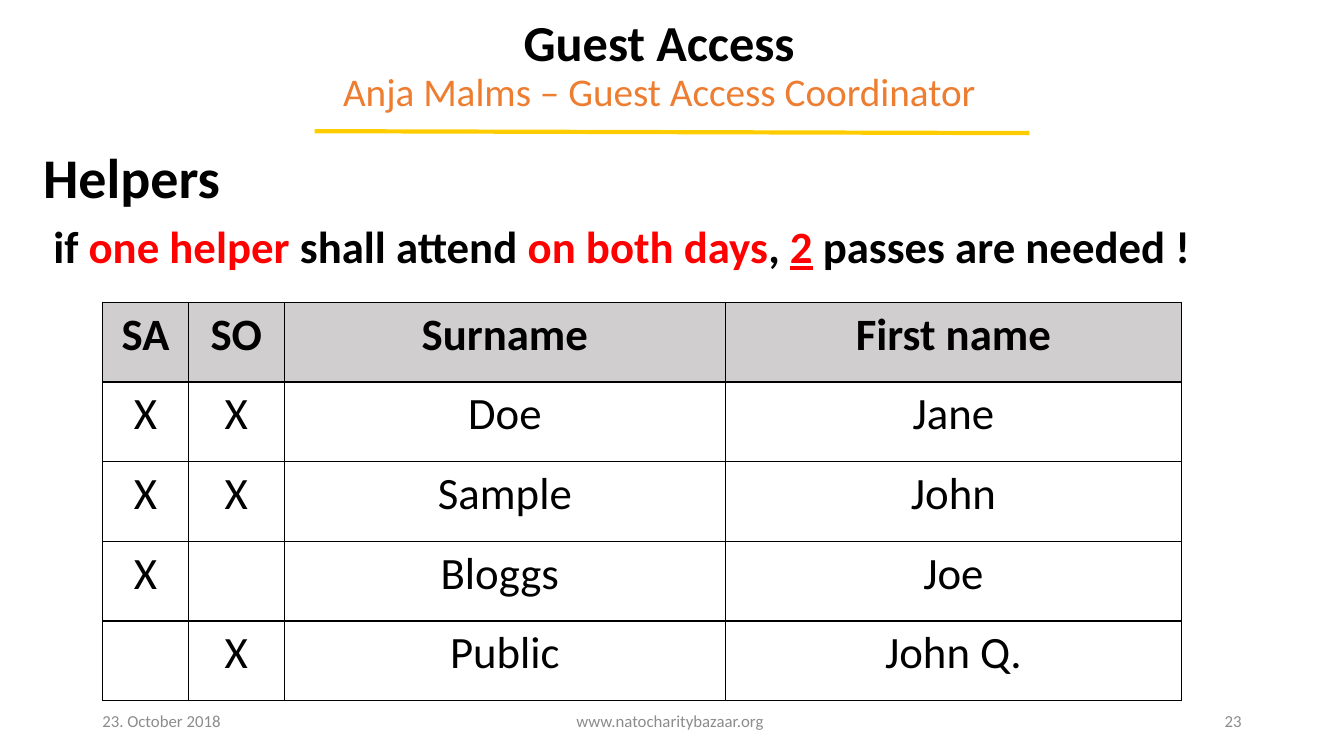
import pptx
import pptx.dml.color
import pptx.enum.shapes
import pptx.enum.text
import pptx.oxml
import pptx.oxml.ns
import pptx.util

Pt = pptx.util.Pt
RGB = pptx.dml.color.RGBColor
ALIGN = pptx.enum.text.PP_ALIGN
ANCHOR = pptx.enum.text.MSO_ANCHOR

BLACK = RGB(0x00, 0x00, 0x00)
WHITE = RGB(0xFF, 0xFF, 0xFF)
RED = RGB(0xFF, 0x00, 0x00)
ORANGE = RGB(0xED, 0x7D, 0x31)
GOLD = RGB(0xFF, 0xCC, 0x00)
SILVER = RGB(0xD0, 0xCE, 0xCE)
GREY = RGB(0x8C, 0x8C, 0x8C)
FONT = "Calibri"

ROWS = [
    ("SA", "SO", "Surname", "First name"),
    ("X", "X", "Doe", "Jane"),
    ("X", "X", "Sample", "John"),
    ("X", "", "Bloggs ", "Joe"),
    ("", "X", "Public", "John Q."),
]
WIDTHS = (61.2, 68.4, 315.4, 325.4)


def write(para, text, size=32, color=BLACK, bold=False, under=False,
          align=ALIGN.LEFT):
    """Add a formatted run of text to a paragraph."""
    para.alignment = align
    run = para.add_run()
    run.text = text
    run.font.name = FONT
    run.font.size = Pt(size)
    run.font.bold = bold
    run.font.underline = under
    run.font.color.rgb = color


def frame(slide, left, top, width, height, anchor=ANCHOR.TOP):
    """Add a wrapping text box and return its text frame."""
    box = slide.shapes.add_textbox(Pt(left), Pt(top), Pt(width), Pt(height))
    box.text_frame.word_wrap = True
    box.text_frame.vertical_anchor = anchor
    return box.text_frame


def header(slide, left, top, width, height):
    """Place the title, its subtitle and the rule below them."""
    text = frame(slide, left, top, width, height, ANCHOR.BOTTOM)
    title, name = text.paragraphs[0], text.add_paragraph()
    title.line_spacing = name.line_spacing = 0.9
    write(title, "Guest Access", size=36, bold=True, align=ALIGN.CENTER)
    write(name, "Anja Malms – Guest Access Coordinator", size=28,
          color=ORANGE, align=ALIGN.CENTER)
    start, below = left + 113.8, top + height + 8
    rule = slide.shapes.add_connector(
        pptx.enum.shapes.MSO_CONNECTOR.STRAIGHT,
        Pt(start), Pt(below), Pt(start + 510.5), Pt(below + 1.4))
    rule.line.color.rgb = GOLD
    rule.line.width = Pt(3)
    rule._element.spPr.append(pptx.oxml.parse_xml(
        f'<a:effectLst {pptx.oxml.ns.nsdecls("a")}/>'))


def helpers(slide, left, top, width, height):
    """Place the section heading and the note on passes."""
    text = frame(slide, left, top, width, height)
    head, note = text.paragraphs[0], text.add_paragraph()
    head.line_spacing = note.line_spacing = 0.9
    note.space_before = Pt(10)
    note._p.get_or_add_pPr().set("marL", str(Pt(7.2)))
    write(head, "Helpers", size=40, bold=True)
    for part, color, under in (
            ("if ", BLACK, False), ("one helper ", RED, False),
            ("shall attend ", BLACK, False), ("on both days", RED, False),
            (", ", BLACK, False), ("2", RED, True),
            (" passes are needed !", BLACK, False)):
        write(note, part, color=color, bold=True, under=under)


def border(cell):
    """Draw a thin black line on each side of a cell."""
    props = cell._tc.get_or_add_tcPr()
    for spot, side in enumerate(("lnL", "lnR", "lnT", "lnB")):
        props.insert(spot, pptx.oxml.parse_xml(
            f'<a:{side} {pptx.oxml.ns.nsdecls("a")} w="{Pt(1)}">'
            f'<a:solidFill><a:srgbClr val="{BLACK}"/></a:solidFill>'
            f'</a:{side}>'))


def roster(slide, left, top, width, height):
    """Place the table of helpers and their days."""
    table = slide.shapes.add_table(
        len(ROWS), len(WIDTHS), Pt(left), Pt(top), Pt(width), Pt(height)).table
    for col, size in zip(table.columns, WIDTHS):
        col.width = Pt(size)
    for r, row in enumerate(ROWS):
        table.rows[r].height = Pt(height / len(ROWS))
        for c, text in enumerate(row):
            cell = table.cell(r, c)
            cell.fill.solid()
            cell.fill.fore_color.rgb = WHITE if r else SILVER
            border(cell)
            if text:
                write(cell.text_frame.paragraphs[0], text, bold=r == 0,
                      align=ALIGN.CENTER)


def footer(slide, left, top, width, height):
    """Place the date, web address and slide number."""
    side, mid = 216, 324
    for shift, span, text, align in (
            (0, side, "23. October 2018", ALIGN.LEFT),
            ((width - mid) / 2, mid, "www.natocharitybazaar.org ",
             ALIGN.CENTER),
            (width - side, side, "23", ALIGN.RIGHT)):
        part = frame(slide, left + shift, top, span, height, ANCHOR.MIDDLE)
        write(part.paragraphs[0], text, size=12, color=GREY, align=align)


def main():
    """Build the slide and save it."""
    deck = pptx.Presentation()
    deck.slide_width, deck.slide_height = Pt(960), Pt(540)
    slide = deck.slides.add_slide(deck.slide_layouts[6])
    helpers(slide, 23.8, 103.7, 907.2, 133.2)
    footer(slide, 66, 500.5, 828, 28.8)
    roster(slide, 73.4, 216, sum(WIDTHS), 284.5)
    header(slide, 110.9, 17.3, 720, 68.4)
    deck.save("out.pptx")


if __name__ == "__main__":
    main()
